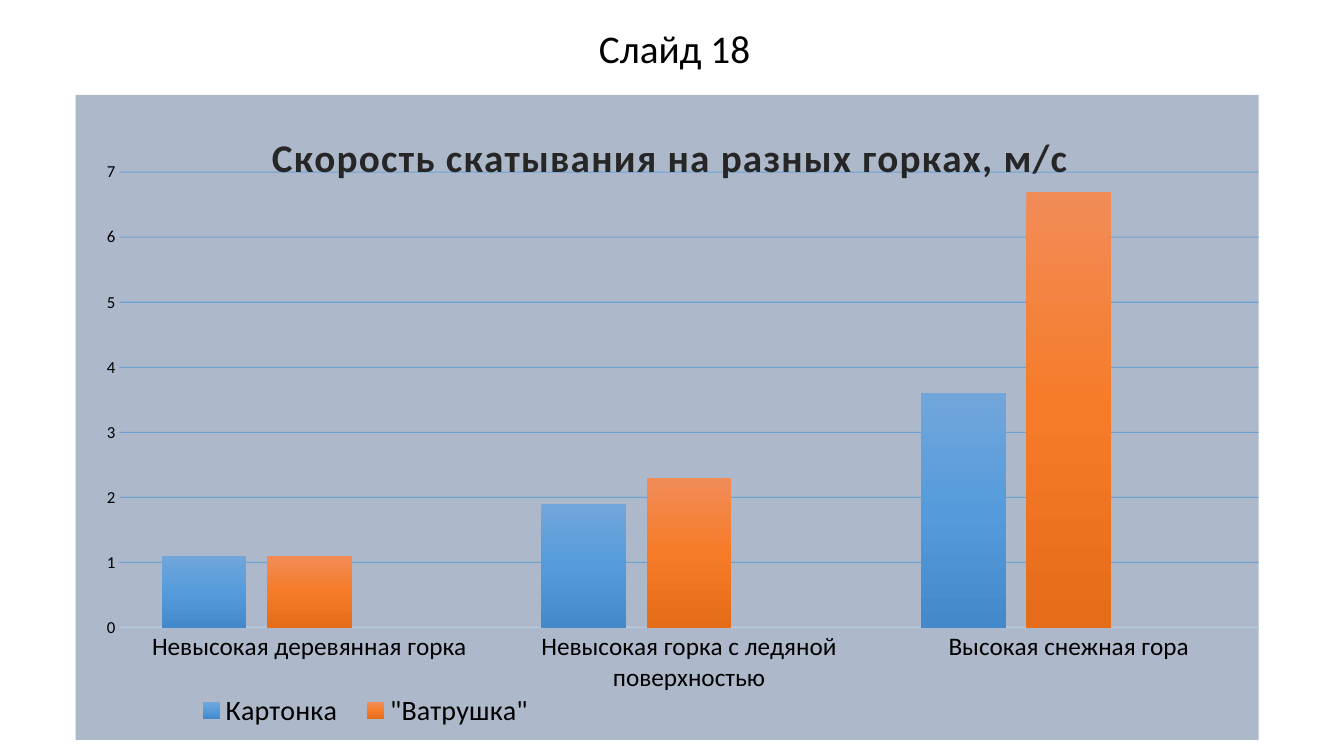
from lxml import etree
from pptx import Presentation
from pptx import util as u
from pptx.chart.data import CategoryChartData
from pptx.dml.color import RGBColor
from pptx.enum import chart as ch, text
from pptx.oxml import parse_xml
from pptx.oxml.ns import nsdecls, qn

HUES = {"back": "ADB9CA", "ink": "000000", "title": "262626",
        "grid": "5B9BD5", "base": "F2F2F2", "white": "FFFFFF"}
FONT = "Calibri"
ROWS = [
    ("Картонка", (1.1, 1.9, 3.6), ("71A6DB", "559BDB", "448ACA")),
    ('"Ватрушка"', (1.1, 2.3, 6.7), ("F18C57", "F67B28", "E56C19")),
    ("Series 3", (None, None, None), ("AFAFAF", "A5A5A5", "939393")),
]


def style(font, size, hue="ink", bold=False):
    font.name, font.size, font.bold = FONT, u.Pt(size), bold
    font.color.rgb = RGBColor.from_string(HUES[hue])


def layout(inner=False, **box):
    parts = '<c:layoutTarget val="inner"/>' if inner else ""
    parts += "".join(f'<c:{k}Mode val="edge"/>' for k in "xy")
    parts += "".join(f'<c:{k} val="{v}"/>' for k, v in box.items())
    return parse_xml(f'<c:layout {nsdecls("c")}><c:manualLayout>{parts}'
                     '</c:manualLayout></c:layout>')


prs = Presentation()
prs.slide_width, prs.slide_height = u.Inches(13.33), u.Inches(7.5)
W, H = prs.slide_width, prs.slide_height
slide = prs.slides.add_slide(prs.slide_layouts[6])

data = CategoryChartData()
data.categories = ["Невысокая деревянная горка",
                   "Невысокая горка с ледяной поверхностью",
                   "Высокая снежная гора"]
for name, vals, _ in ROWS:
    data.add_series(name, vals)
chart = slide.shapes.add_chart(
    ch.XL_CHART_TYPE.COLUMN_CLUSTERED, u.Inches(0.75), u.Inches(0.94),
    u.Inches(11.74), u.Inches(6.4), data).chart
style(chart.font, 10)
root = chart._chartSpace
root.find(qn("c:chart")).addnext(parse_xml(
    f'<c:spPr {nsdecls("c", "a")}><a:solidFill><a:srgbClr val="{HUES["back"]}"/>'
    '</a:solidFill><a:ln><a:noFill/></a:ln></c:spPr>'))

area = root.find(".//" + qn("c:plotArea"))
for old in area.findall(qn("c:layout")):
    area.remove(old)
area.insert(0, layout(True, x=0.037, y=0.12, w=0.963, h=0.706))

chart.has_title = True
head = chart.chart_title
head.text_frame.text = "Скорость скатывания на разных горках, м/с"
run = head.text_frame.paragraphs[0].runs[0]
style(run.font, 28, "title", True)
run.font._element.set("spc", "100")
for old in head._element.findall(qn("c:layout")):
    head._element.remove(old)
head._element.find(qn("c:tx")).addnext(layout(x=0.16, y=0.045))
head.include_in_layout = False

plot = chart.plots[0]
plot.gap_width, plot.overlap, plot.vary_by_categories = 100, -24, False
for ser, (_, _, tones) in zip(plot.series, ROWS):
    ser.invert_if_negative = False
    stops = "".join(f'<a:gs pos="{i * 50000}"><a:srgbClr val="{tone}"/></a:gs>'
                    for i, tone in enumerate(tones))
    ser._element.get_or_add_spPr().append(parse_xml(
        f'<a:gradFill {nsdecls("a")}><a:gsLst>{stops}</a:gsLst>'
        '<a:lin ang="5400000" scaled="0"/></a:gradFill>'))

cat, val = chart.category_axis, chart.value_axis
val.minimum_scale, val.maximum_scale, val.major_unit = 0, 7, 1
val.has_major_gridlines = True
for axis, size in ((cat, 18), (val, 12)):
    axis.major_tick_mark = axis.minor_tick_mark = ch.XL_TICK_MARK.NONE
    style(axis.tick_labels.font, size)
val.format.line.fill.background()
for line, hue, wide, alpha in ((cat.format.line, "base", 1, 54),
                               (val.major_gridlines.format.line, "grid", 0.75, 80)):
    line.width = u.Pt(wide)
    line.color.rgb = RGBColor.from_string(HUES[hue])
    tint = line._ln.find(".//" + qn("a:srgbClr"))
    etree.SubElement(tint, qn("a:alpha")).set("val", str(alpha * 1000))

chart.has_legend = True
key = chart.legend
key.position = ch.XL_LEGEND_POSITION.BOTTOM
key.include_in_layout = False
style(key.font, 20)
for old in key._element.findall(qn("c:layout")):
    key._element.remove(old)
spot = key._element.find(qn("c:legendPos"))
spot.addnext(layout(x=0.09, y=0.92, w=0.31, h=0.07))
spot.addnext(parse_xml(f'<c:legendEntry {nsdecls("c")}><c:idx val="2"/>'
                       '<c:delete val="1"/></c:legendEntry>'))

box = slide.shapes.add_textbox(u.Inches(5.65), u.Inches(0.19),
                               u.Inches(2.08), u.Inches(0.57))
box.fill.solid()
box.fill.fore_color.rgb = RGBColor.from_string(HUES["white"])
frame = box.text_frame
frame.text = "Слайд 18"
frame.word_wrap = True
frame.auto_size = text.MSO_AUTO_SIZE.SHAPE_TO_FIT_TEXT
frame.paragraphs[0].alignment = text.PP_ALIGN.CENTER
style(frame.paragraphs[0].runs[0].font, 28)

prs.save("out.pptx")
